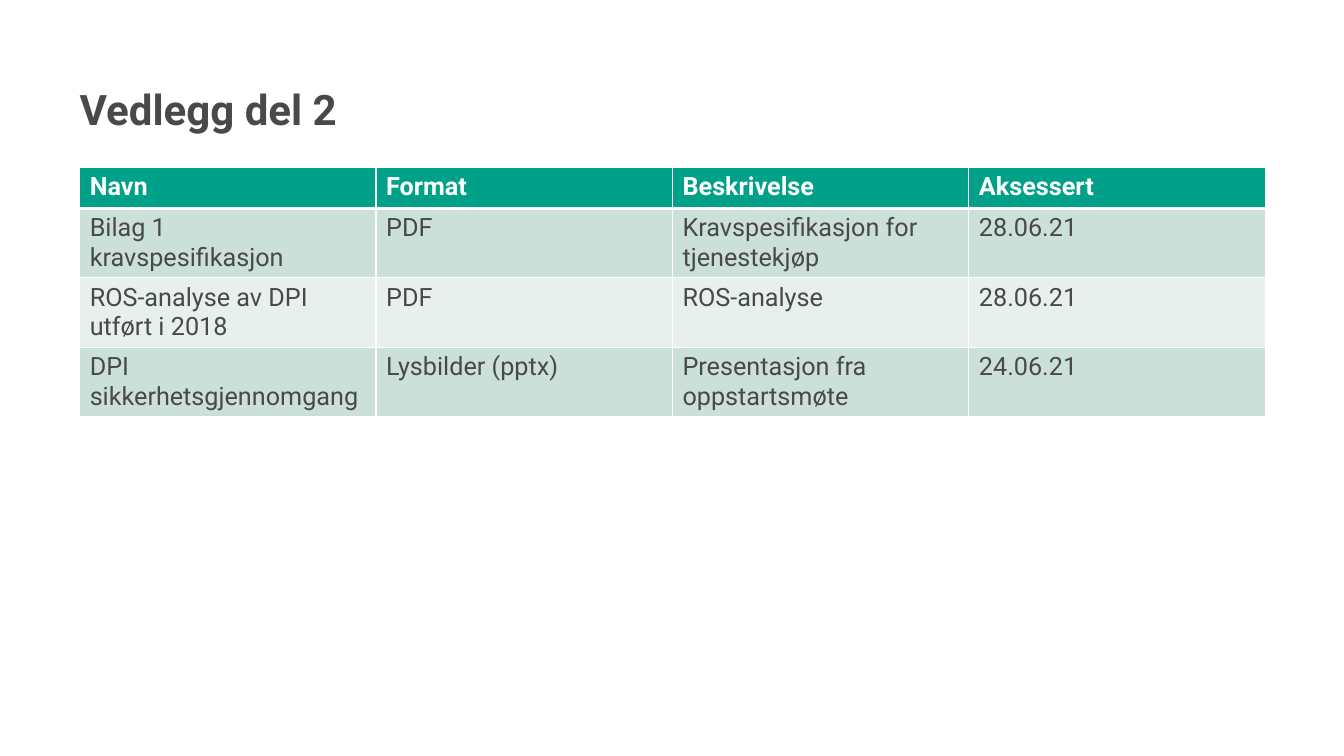
import pptx
import pptx.util
import pptx.dml.color
import pptx.enum.text
import pptx.oxml
import pptx.oxml.ns
from dataclasses import dataclass

TITLE = "Vedlegg del 2"
HEADER = ("Navn", "Format", "Beskrivelse", "Aksessert")
ATTACHMENTS = [
    ("Bilag 1 kravspesifikasjon", "PDF", "Kravspesifikasjon for tjenestekjøp", "28.06.21"),
    ("ROS-analyse av DPI utført i 2018", "PDF", "ROS-analyse", "28.06.21"),
    ("DPI sikkerhetsgjennomgang", "Lysbilder (pptx)", "Presentasjon fra oppstartsmøte", "24.06.21"),
]


@dataclass(frozen=True)
class Theme:
    font: str = "Roboto"
    title_size: int = 30
    table_size: int = 18
    text: str = "494949"
    light: str = "FFFFFF"
    header: str = "00A188"
    bands: tuple = ("CCE0DA", "E7F0ED")
    rule: int = 1
    header_rule: int = 3


THEME = Theme()
SLIDE_W, SLIDE_H = 13.33, 7.5
MARGIN = 0.79
CONTENT_W = 11.76
TITLE_TOP, TITLE_H = 0.81, 0.6
TABLE_TOP = 1.66
HEADER_H, ROW_H = 0.41, 0.68

inches = pptx.util.Inches
rgb = pptx.dml.color.RGBColor.from_string


def style(p, size, color, bold):
    p.font.name = THEME.font
    p.font.size = pptx.util.Pt(size)
    p.font.color.rgb = rgb(color)
    p.font.bold = bold


def set_borders(cell, widths):
    """Draw light rules; widths maps the sides L, R, T, B to points."""
    tc_pr = cell._tc.get_or_add_tcPr()
    for i, (side, width) in enumerate(widths.items()):
        line = pptx.oxml.parse_xml(
            f'<a:ln{side} {pptx.oxml.ns.nsdecls("a")} w="{pptx.util.Pt(width)}">'
            f'<a:solidFill><a:srgbClr val="{THEME.light}"/></a:solidFill></a:ln{side}>')
        tc_pr.insert(i, line)


def add_title(slide):
    sp = slide.shapes.title
    sp.left, sp.top = inches(MARGIN), inches(TITLE_TOP)
    sp.width, sp.height = inches(CONTENT_W), inches(TITLE_H)
    tf = sp.text_frame
    tf.text = TITLE
    tf.margin_left = tf.margin_right = tf.margin_top = tf.margin_bottom = 0
    tf.vertical_anchor = pptx.enum.text.MSO_ANCHOR.MIDDLE
    p = tf.paragraphs[0]
    p.alignment = pptx.enum.text.PP_ALIGN.LEFT
    p.line_spacing = 0.9
    style(p, THEME.title_size, THEME.text, True)


def add_attachments(slide):
    rows = [HEADER, *ATTACHMENTS]
    heights = [HEADER_H] + [ROW_H] * len(ATTACHMENTS)
    table = slide.shapes.add_table(
        len(rows), len(HEADER), inches(MARGIN), inches(TABLE_TOP),
        inches(CONTENT_W), inches(sum(heights))).table
    for r, (values, height) in enumerate(zip(rows, heights)):
        table.rows[r].height = inches(height)
        is_header = r == 0
        fill = THEME.header if is_header else THEME.bands[(r - 1) % 2]
        color = THEME.light if is_header else THEME.text
        top = THEME.header_rule if r == 1 else THEME.rule
        bottom = THEME.header_rule if is_header else THEME.rule
        for c, value in enumerate(values):
            cell = table.cell(r, c)
            cell.text = value
            style(cell.text_frame.paragraphs[0], THEME.table_size, color, is_header)
            cell.fill.solid()
            cell.fill.fore_color.rgb = rgb(fill)
            set_borders(cell, {"L": THEME.rule, "R": THEME.rule, "T": top, "B": bottom})


def main():
    prs = pptx.Presentation()
    prs.slide_width, prs.slide_height = inches(SLIDE_W), inches(SLIDE_H)
    slide = prs.slides.add_slide(prs.slide_layouts.get_by_name("Title Only"))
    add_title(slide)
    add_attachments(slide)
    prs.save("out.pptx")


if __name__ == "__main__":
    main()
